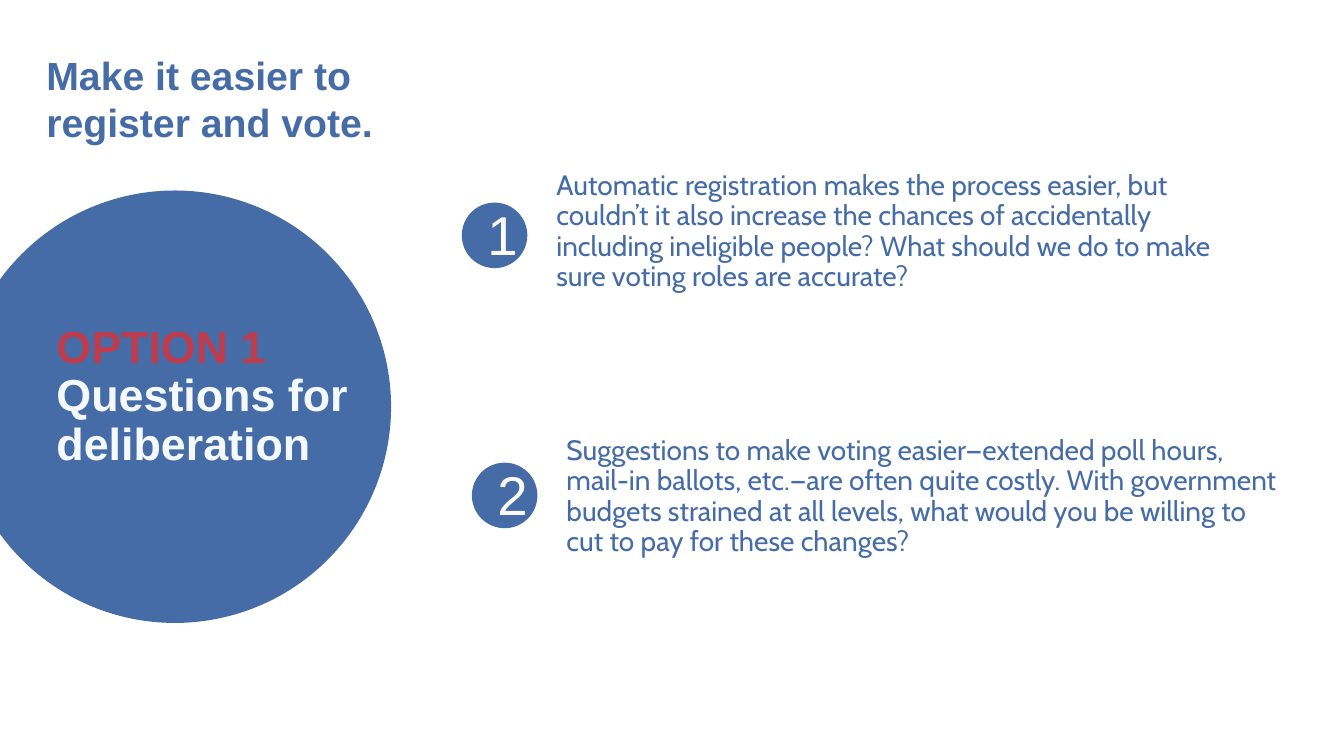
from dataclasses import dataclass
from typing import NamedTuple

from pptx import Presentation
from pptx.dml.color import RGBColor
from pptx.enum.shapes import MSO_SHAPE as Preset
from pptx.enum.text import MSO_ANCHOR as Anchor, PP_ALIGN as Align
from pptx.slide import Slide
from pptx.util import Inches, Pt

SLIDE_WIDTH = Inches(13.33)
SLIDE_HEIGHT = Inches(7.5)


@dataclass(frozen=True)
class Theme:
    blue: str = "466CA7"
    red: str = "BE3C4C"
    pale: str = "F4F9FE"
    cream: str = "FDFAF5"
    heading_font: str = "Arial"
    body_font: str = "Cabin"
    title_size: int = 28
    option_size: int = 32
    number_size: int = 39
    body_size: int = 20


class Area(NamedTuple):
    """Percentages of the slide's width and height."""

    left: float
    top: float
    width: float
    height: float

    def box(self) -> tuple[int, int, int, int]:
        return (
            int(SLIDE_WIDTH * self.left / 100),
            int(SLIDE_HEIGHT * self.top / 100),
            int(SLIDE_WIDTH * self.width / 100),
            int(SLIDE_HEIGHT * self.height / 100),
        )


class Style(NamedTuple):
    font: str
    size: int
    bold: bool = False
    spacing: float = 1.0
    anchor: Anchor = Anchor.TOP
    inset_x: float = 0.1
    inset_y: float = 0.05


class Line(NamedTuple):
    text: str
    color: str


class Question(NamedTuple):
    number: str
    text: str
    left: float
    top: float
    text_top: float
    text_width: float


THEME = Theme()
TITLE = Style(THEME.heading_font, THEME.title_size, bold=True, inset_x=0, inset_y=0)
OPTION = Style(THEME.heading_font, THEME.option_size, bold=True, spacing=0.9, inset_x=0.03, inset_y=0.03)
NUMBER = Style(THEME.heading_font, THEME.number_size, anchor=Anchor.MIDDLE)
BODY = Style(THEME.body_font, THEME.body_size, spacing=0.9, anchor=Anchor.MIDDLE)

QUESTIONS = (
    Question(
        "1",
        "Automatic registration makes the process easier, but couldn’t it also increase "
        "the chances of accidentally including ineligible people? What should we do to "
        "make sure voting roles are accurate?",
        34.36, 26.8, 25.07, 53.41,
    ),
    Question(
        "2",
        "Suggestions to make voting easier—extended poll hours, mail-in ballots, "
        "etc.—are often quite costly. With government budgets strained at all levels, "
        "what would you be willing to cut to pay for these changes?",
        35.11, 61.2, 60.13, 54.54,
    ),
)


def apply(target: object, values: dict[str, object]) -> None:
    for name, value in values.items():
        setattr(target, name, value)


def add_circle(slide: Slide, area: Area) -> None:
    circle = slide.shapes.add_shape(Preset.OVAL, *area.box())
    circle.shadow.inherit = False
    circle.fill.solid()
    circle.fill.fore_color.rgb = RGBColor.from_string(THEME.blue)
    circle.line.fill.background()


def add_text(slide: Slide, area: Area, style: Style, *lines: Line) -> None:
    frame = slide.shapes.add_textbox(*area.box()).text_frame
    apply(frame, {
        "word_wrap": True,
        "vertical_anchor": style.anchor,
        "margin_left": Inches(style.inset_x),
        "margin_right": Inches(style.inset_x),
        "margin_top": Inches(style.inset_y),
        "margin_bottom": Inches(style.inset_y),
    })
    for index, line in enumerate(lines):
        paragraph = frame.add_paragraph() if index else frame.paragraphs[0]
        apply(paragraph, {"alignment": Align.LEFT, "line_spacing": style.spacing})
        run = paragraph.add_run()
        run.text = line.text
        apply(run.font, {"name": style.font, "size": Pt(style.size), "bold": style.bold})
        run.font.color.rgb = RGBColor.from_string(line.color)


def add_question(slide: Slide, question: Question) -> None:
    left, top = question.left, question.top
    add_circle(slide, Area(left, top, 4.88, 8.67))
    add_text(slide, Area(left + 1.16, top - 2.6, 4.8, 13.33), NUMBER,
             Line(question.number, THEME.cream))
    add_text(slide, Area(left + 6.3, question.text_top, question.text_width, 11.2), BODY,
             Line(question.text, THEME.blue))


def main() -> None:
    presentation = Presentation()
    apply(presentation, {"slide_width": SLIDE_WIDTH, "slide_height": SLIDE_HEIGHT})
    slide = presentation.slides.add_slide(presentation.slide_layouts[6])
    add_circle(slide, Area(-3.08, 25.2, 32.18, 57.2))
    add_text(slide, Area(3.98, 42.53, 27.61, 20.13), OPTION,
             Line("OPTION 1", THEME.red), Line("Questions for deliberation", THEME.pale))
    for question in QUESTIONS:
        add_question(slide, question)
    add_text(slide, Area(3.45, 6.8, 28.81, 15.87), TITLE,
             Line("Make it easier to", THEME.blue), Line("register and vote.", THEME.blue))
    presentation.save("out.pptx")


if __name__ == "__main__":
    main()
